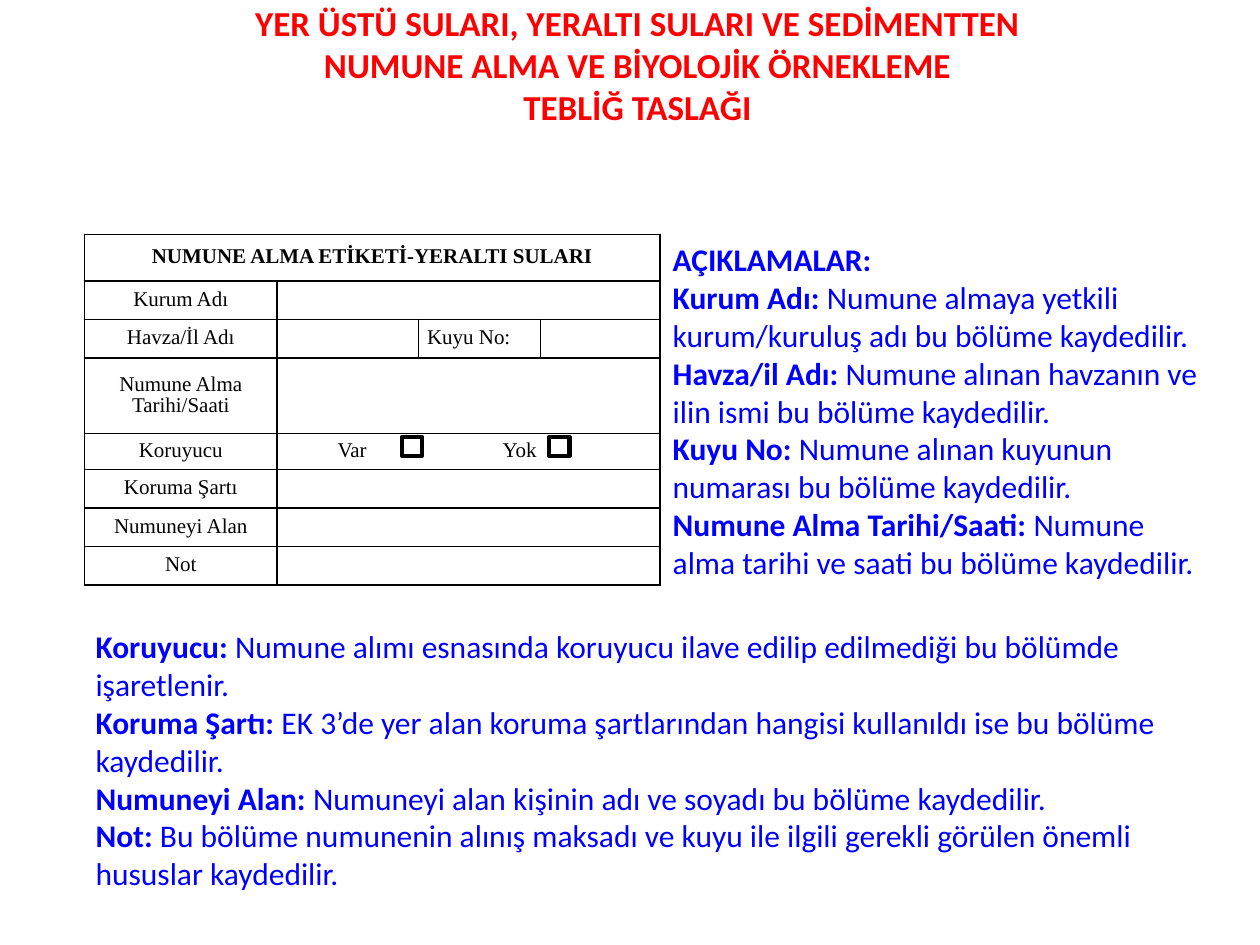
import lxml.etree
import pptx
import pptx.dml.color
import pptx.enum.shapes
import pptx.enum.text
import pptx.oxml.ns
import pptx.util

Inches = pptx.util.Inches
Pt = pptx.util.Pt
ALIGN = pptx.enum.text.PP_ALIGN
ANCHOR = pptx.enum.text.MSO_ANCHOR

# Content
TITLE = [
    "YER ÜSTÜ SULARI, YERALTI SULARI VE SEDİMENTTEN",
    "NUMUNE ALMA VE BİYOLOJİK ÖRNEKLEME",
    "TEBLİĞ TASLAĞI",
]
# Each row: cell texts; a short row merges its last cell to the right edge
LABEL_ROWS = [
    ["NUMUNE ALMA ETİKETİ-YERALTI SULARI"],
    ["Kurum Adı", ""],
    ["Havza/İl Adı", "", "Kuyu No:", ""],
    ["Numune Alma\nTarihi/Saati", ""],
    ["Koruyucu", "\tVar\tYok"],
    ["Koruma Şartı", ""],
    ["Numuneyi Alan", ""],
    ["Not", ""],
]
SIDE_NOTES = [
    ("AÇIKLAMALAR:", ""),
    ("Kurum Adı: ", "Numune almaya yetkili kurum/kuruluş adı bu bölüme kaydedilir."),
    ("Havza/il Adı: ", "Numune alınan havzanın ve ilin ismi bu bölüme kaydedilir."),
    ("Kuyu No: ", "Numune alınan kuyunun numarası bu bölüme kaydedilir."),
    ("Numune Alma Tarihi/Saati: ", "Numune alma tarihi ve saati bu bölüme kaydedilir."),
]
LOWER_NOTES = [
    ("Koruyucu: ", "Numune alımı esnasında koruyucu ilave edilip edilmediği bu bölümde işaretlenir."),
    ("Koruma Şartı: ", "EK 3’de yer alan koruma şartlarından hangisi kullanıldı ise bu bölüme kaydedilir."),
    ("Numuneyi Alan: ", "Numuneyi alan kişinin adı ve soyadı bu bölüme kaydedilir."),
    ("Not: ", "Bu bölüme numunenin alınış maksadı ve kuyu ile ilgili gerekli görülen önemli "
              "hususlar kaydedilir."),
]

# Layout in inches
TABLE_LEFT, TABLE_TOP = 0.67, 1.86
COLUMNS = [1.53, 1.12, 0.97, 0.95]
ROW, HEADER_ROW, TALL_ROW = 0.285, 0.37, 0.6
ROWS = [HEADER_ROW, ROW, ROW, TALL_ROW] + [ROW] * 4
CHECK_ROW = 4
CHECK_TABS = [0.41, 1.72]
CHECK_LEFTS = [3.19, 4.36]
CHECK_SIZE = (0.16, 0.15)

# Formats
TITLE_FONT = {"name": "Calibri", "size": Pt(20), "bold": True}
NOTE_FONT = {"name": "Calibri", "size": Pt(18)}
CELL_FONT = {"name": "Times New Roman", "size": Pt(12)}
CELL_FORMAT = {
    "margin_left": Inches(0.07), "margin_right": Inches(0.07),
    "margin_top": 0, "margin_bottom": 0, "vertical_anchor": ANCHOR.MIDDLE,
}


def color(value):
    return pptx.dml.color.RGBColor.from_string(value)


def set_values(target, values):
    for name, value in values.items():
        setattr(target, name, value)


def add_run(paragraph, text, font, font_color, bold=False):
    run = paragraph.add_run()
    run.text = text
    set_values(run.font, {"bold": bold, **font})
    run.font.color.rgb = color(font_color)


def paragraphs_of(frame, count):
    return [frame.paragraphs[0]] + [frame.add_paragraph() for _ in range(count - 1)]


def set_borders(cell):
    properties = cell._tc.get_or_add_tcPr()
    for position, side in enumerate(("lnL", "lnR", "lnT", "lnB")):
        line = lxml.etree.Element(pptx.oxml.ns.qn("a:" + side), w=str(Pt(1)))
        fill = lxml.etree.SubElement(line, pptx.oxml.ns.qn("a:solidFill"))
        lxml.etree.SubElement(fill, pptx.oxml.ns.qn("a:srgbClr"), val="000000")
        properties.insert(position, line)


def add_tabs(paragraph, stops):
    tabs = lxml.etree.SubElement(paragraph._p.get_or_add_pPr(), pptx.oxml.ns.qn("a:tabLst"))
    for stop in stops:
        lxml.etree.SubElement(tabs, pptx.oxml.ns.qn("a:tab"), pos=str(Inches(stop)), algn="l")


def add_label_table(slide):
    frame = slide.shapes.add_table(
        len(ROWS), len(COLUMNS), Inches(TABLE_LEFT), Inches(TABLE_TOP),
        Inches(sum(COLUMNS)), Inches(sum(ROWS)))
    table = frame.table
    table.first_row = table.horz_banding = False
    for column, width in zip(table.columns, COLUMNS):
        column.width = Inches(width)
    for row, height in zip(table.rows, ROWS):
        row.height = Inches(height)

    for row_index, texts in enumerate(LABEL_ROWS):
        last = len(texts) - 1
        if len(texts) < len(COLUMNS):
            table.cell(row_index, last).merge(table.cell(row_index, len(COLUMNS) - 1))
        for column_index in range(len(COLUMNS)):
            cell = table.cell(row_index, column_index)
            set_values(cell, CELL_FORMAT)
            cell.fill.solid()
            cell.fill.fore_color.rgb = color("FFFFFF")
            set_borders(cell)
            lines = texts[column_index].split("\n") if column_index <= last else [""]
            for paragraph, line in zip(paragraphs_of(cell.text_frame, len(lines)), lines):
                paragraph.line_spacing = Pt(12)
                paragraph.alignment = ALIGN.LEFT if column_index else ALIGN.CENTER
                if "\t" in line:
                    add_tabs(paragraph, CHECK_TABS)
                if line:
                    add_run(paragraph, line, CELL_FONT, "000000", bold=row_index == 0)


def add_notes(slide, notes, left, top, width, height):
    box = slide.shapes.add_textbox(Inches(left), Inches(top), Inches(width), Inches(height))
    box.text_frame.word_wrap = True
    for paragraph, (term, meaning) in zip(paragraphs_of(box.text_frame, len(notes)), notes):
        add_run(paragraph, term, NOTE_FONT, "0000FF", bold=True)
        if meaning:
            add_run(paragraph, meaning, NOTE_FONT, "0000FF")


def add_check_boxes(slide):
    width, height = CHECK_SIZE
    top = TABLE_TOP + sum(ROWS[:CHECK_ROW]) + (ROW - height) / 2
    for left in CHECK_LEFTS:
        box = slide.shapes.add_shape(
            pptx.enum.shapes.MSO_SHAPE.RECTANGLE,
            Inches(left), Inches(top), Inches(width), Inches(height))
        box.shadow.inherit = False
        box.fill.solid()
        box.fill.fore_color.rgb = color("FFFFFF")
        box.line.color.rgb = color("000000")
        box.line.width = Pt(2.5)


def set_title(slide):
    title = slide.shapes.title
    set_values(title, {"left": Inches(0.75), "top": Inches(-0.04),
                       "width": Inches(8.62), "height": Inches(1.11)})
    set_values(title.text_frame, {"word_wrap": True, "vertical_anchor": ANCHOR.MIDDLE,
                                  "auto_size": pptx.enum.text.MSO_AUTO_SIZE.NONE})
    for paragraph, line in zip(paragraphs_of(title.text_frame, len(TITLE)), TITLE):
        paragraph.alignment = ALIGN.CENTER
        add_run(paragraph, line, TITLE_FONT, "FF0000")


def main():
    presentation = pptx.Presentation()
    presentation.slide_width, presentation.slide_height = Inches(10), Inches(7.5)
    slide = presentation.slides.add_slide(presentation.slide_layouts[5])
    set_title(slide)
    add_label_table(slide)
    add_notes(slide, SIDE_NOTES, TABLE_LEFT + sum(COLUMNS), TABLE_TOP, 4.41, 2.83)
    add_notes(slide, LOWER_NOTES, 0.66, 4.93, 8.78, 2.52)
    add_check_boxes(slide)
    presentation.save("out.pptx")


if __name__ == "__main__":
    main()
